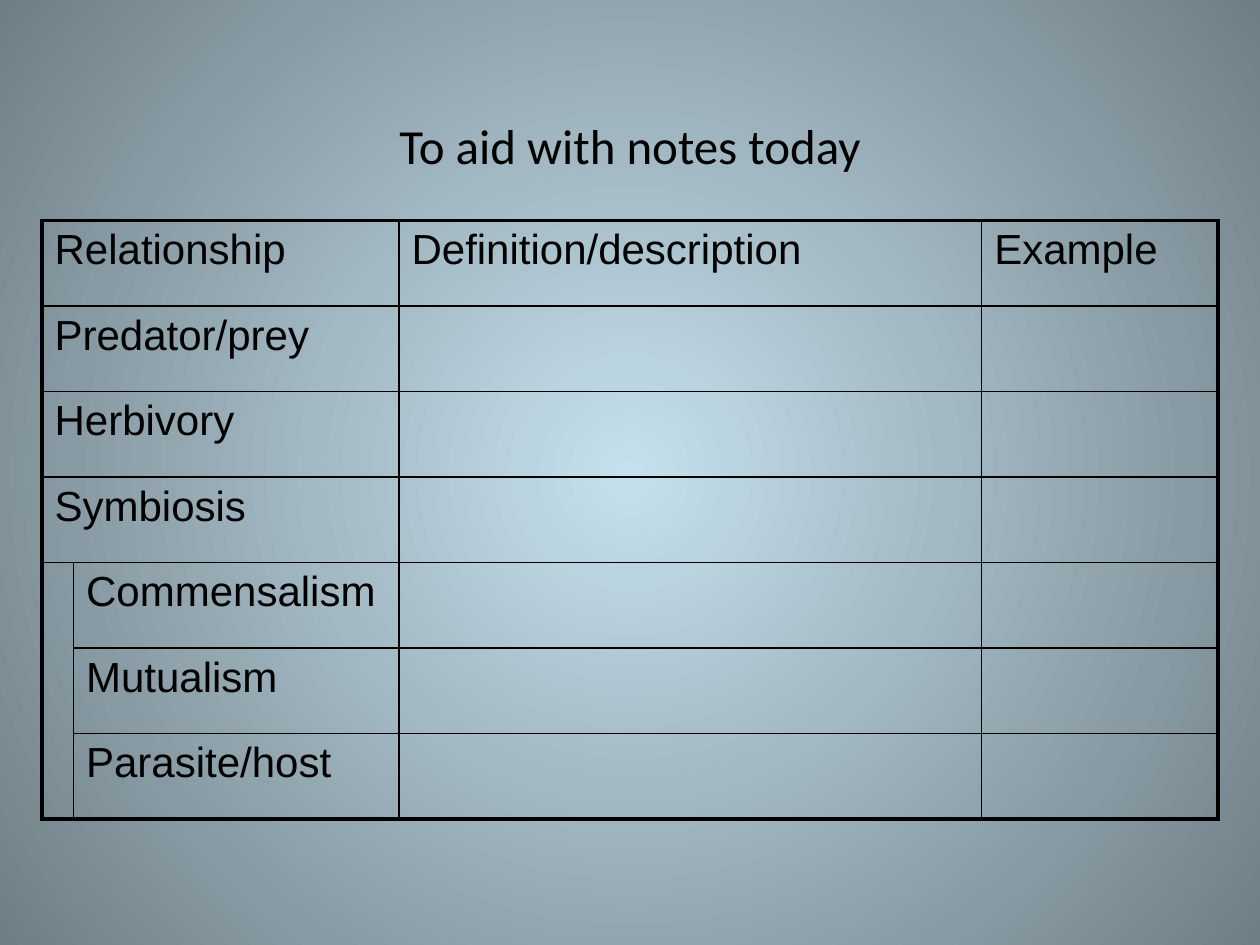
"""Build a note-taking table of ecological relationships."""
from lxml import etree
from pptx import Presentation
from pptx.dml.color import RGBColor
from pptx.enum.text import MSO_ANCHOR, PP_ALIGN
from pptx.oxml import parse_xml
from pptx.oxml.ns import nsdecls, qn
from pptx.util import Pt

MIDDLE = MSO_ANCHOR.MIDDLE
CENTER = PP_ALIGN.CENTER
BLACK = RGBColor(0x00, 0x00, 0x00)
PALE_BLUE = RGBColor(0xC5, 0xE0, 0xED)
SLATE = RGBColor(0x6F, 0x7E, 0x85)
THIN, THICK = Pt(1), Pt(2.25)
COL_WIDTHS = [18, 186, 333, 135]
HEADERS = {0: "Relationship", 2: "Definition/description", 3: "Example"}
MAIN_ROWS = ["Predator/prey", "Herbivory", "Symbiosis"]
SUB_ROWS = ["Commensalism", "Mutualism", "Parasite/host"]
TABLE_HEIGHT = 342


def style_text(p, font_name, size):
    p.font.name = font_name
    p.font.size = Pt(size)
    p.font.color.rgb = BLACK


def add_borders(cell, edges):
    tc_pr = cell._tc.get_or_add_tcPr()
    for i, (side, width) in enumerate(edges.items()):
        tc_pr.insert(i, parse_xml(
            f'<a:ln{side} {nsdecls("a")} w="{width}"><a:solidFill>'
            f'<a:srgbClr val="{BLACK}"/></a:solidFill></a:ln{side}>'))


prs = Presentation()
prs.slide_width, prs.slide_height = Pt(720), Pt(540)
s = prs.slides.add_slide(prs.slide_layouts[6])

fill = s.background.fill
fill.gradient()
for stop, color, position in zip(fill.gradient_stops, (PALE_BLUE, SLATE), (0, 1)):
    stop.color.rgb = color
    stop.position = position
grad = next(s._element.iter(qn("a:gradFill")))
grad.remove(grad.find(qn("a:lin")))
radial = etree.SubElement(grad, qn("a:path"))
radial.set("path", "circle")
center = etree.SubElement(radial, qn("a:fillToRect"))
for side in "ltrb":
    center.set(side, "50000")

sp = s.shapes.add_textbox(Pt(36), Pt(54), Pt(648), Pt(57.6))
tf = sp.text_frame
tf.word_wrap = True
tf.vertical_anchor = MIDDLE
p = tf.paragraphs[0]
p.text = "To aid with notes today"
p.alignment = CENTER
style_text(p, "Calibri", 28)

n_cols = len(COL_WIDTHS)
n_rows = 1 + len(MAIN_ROWS) + len(SUB_ROWS)
first_sub = 1 + len(MAIN_ROWS)
table = s.shapes.add_table(n_rows, n_cols, Pt(24), Pt(126),
                           Pt(sum(COL_WIDTHS)), Pt(TABLE_HEIGHT)).table
table.first_row = False
table.horz_banding = False
for column, width in zip(table.columns, COL_WIDTHS):
    column.width = Pt(width)
for row in table.rows:
    row.height = Pt(TABLE_HEIGHT / n_rows)

for r in range(first_sub):
    table.cell(r, 0).merge(table.cell(r, 1))
table.cell(first_sub, 0).merge(table.cell(n_rows - 1, 0))

labels = {(0, c): text for c, text in HEADERS.items()}
labels.update({(r, 0): text for r, text in enumerate(MAIN_ROWS, 1)})
labels.update({(r, 1): text for r, text in enumerate(SUB_ROWS, first_sub)})

for r in range(n_rows):
    for c in range(n_cols):
        cell = table.cell(r, c)
        cell.fill.background()
        p = cell.text_frame.paragraphs[0]
        p.text = labels.get((r, c), "")
        style_text(p, "Arial", 24)
        last_row = r + cell.span_height if cell.is_merge_origin else r + 1
        add_borders(cell, {
            "L": THICK if c == 0 else THIN,
            "R": THICK if c == n_cols - 1 else THIN,
            "T": THICK if r == 0 else THIN,
            "B": THICK if last_row == n_rows else THIN,
        })

prs.save("out.pptx")
